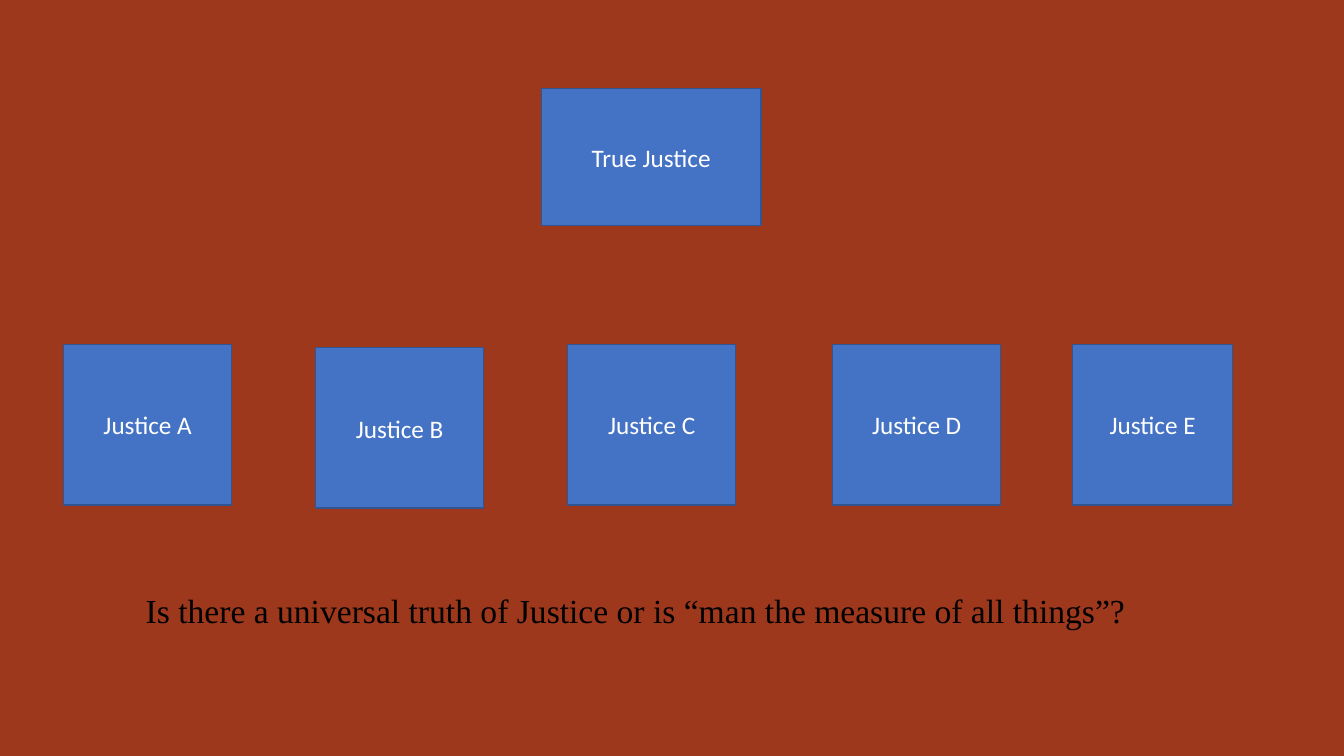
from dataclasses import dataclass

from pptx import Presentation
from pptx.dml.color import RGBColor
from pptx.enum.shapes import MSO_SHAPE
from pptx.enum.text import MSO_ANCHOR, MSO_AUTO_SIZE, PP_ALIGN
from pptx.util import Pt

RECT = MSO_SHAPE.RECTANGLE
MIDDLE = MSO_ANCHOR.MIDDLE
GROW = MSO_AUTO_SIZE.SHAPE_TO_FIT_TEXT
CENTER = PP_ALIGN.CENTER


@dataclass(frozen=True)
class Theme:
    back: RGBColor = RGBColor(0x9E, 0x38, 0x1D)
    fill: RGBColor = RGBColor(0x44, 0x72, 0xC4)
    edge: RGBColor = RGBColor(0x32, 0x54, 0x91)
    light: RGBColor = RGBColor(0xFF, 0xFF, 0xFF)
    dark: RGBColor = RGBColor(0, 0, 0)
    sans: str = "Calibri"
    serif: str = "Times New Roman"
    label: int = 18
    quote: int = 24


THEME = Theme()


def write(frame, text, face, size, color):
    frame.word_wrap = True
    para = frame.paragraphs[0]
    para.text = text
    para.alignment = CENTER
    para.font.name = face
    para.font.size = Pt(size)
    para.font.color.rgb = color


def add_card(slide, box, text):
    card = slide.shapes.add_shape(RECT, *map(Pt, box))
    card.shadow.inherit = False
    card.fill.solid()
    card.fill.fore_color.rgb = THEME.fill
    card.line.color.rgb = THEME.edge
    card.line.width = Pt(1)
    card.text_frame.vertical_anchor = MIDDLE
    write(card.text_frame, text, THEME.sans, THEME.label, THEME.light)


def add_row(slide, box):
    left, top, width, height = box
    cards = [
        ("A", 0, 0, 120.2),
        ("B", 180, 2.2, 120.2),
        ("C", 360, 0, 120.2),
        ("D", 549.3, 0, 120.2),
        ("E", width - height, 0, height),
    ]
    for name, dx, dy, wide in cards:
        add_card(slide, (left + dx, top + dy, wide, height), f"Justice {name}")


def add_quote(slide, box):
    quote = slide.shapes.add_textbox(*map(Pt, box))
    frame = quote.text_frame
    write(
        frame,
        "Is there a universal truth of Justice or is “man the measure of all things”?",
        THEME.serif,
        THEME.quote,
        THEME.dark,
    )
    frame.auto_size = GROW


def main():
    deck = Presentation()
    deck.slide_width = Pt(960)
    deck.slide_height = Pt(540)
    slide = deck.slides.add_slide(deck.slide_layouts[6])
    slide.background.fill.solid()
    slide.background.fill.fore_color.rgb = THEME.back
    add_row(slide, (45.4, 246.2, 835.2, 114.5))
    add_card(slide, (386.6, 63.4, 157, 97.9), "True Justice")
    add_quote(slide, (56.9, 417.6, 794.2, 36))
    deck.save("out.pptx")


if __name__ == "__main__":
    main()
